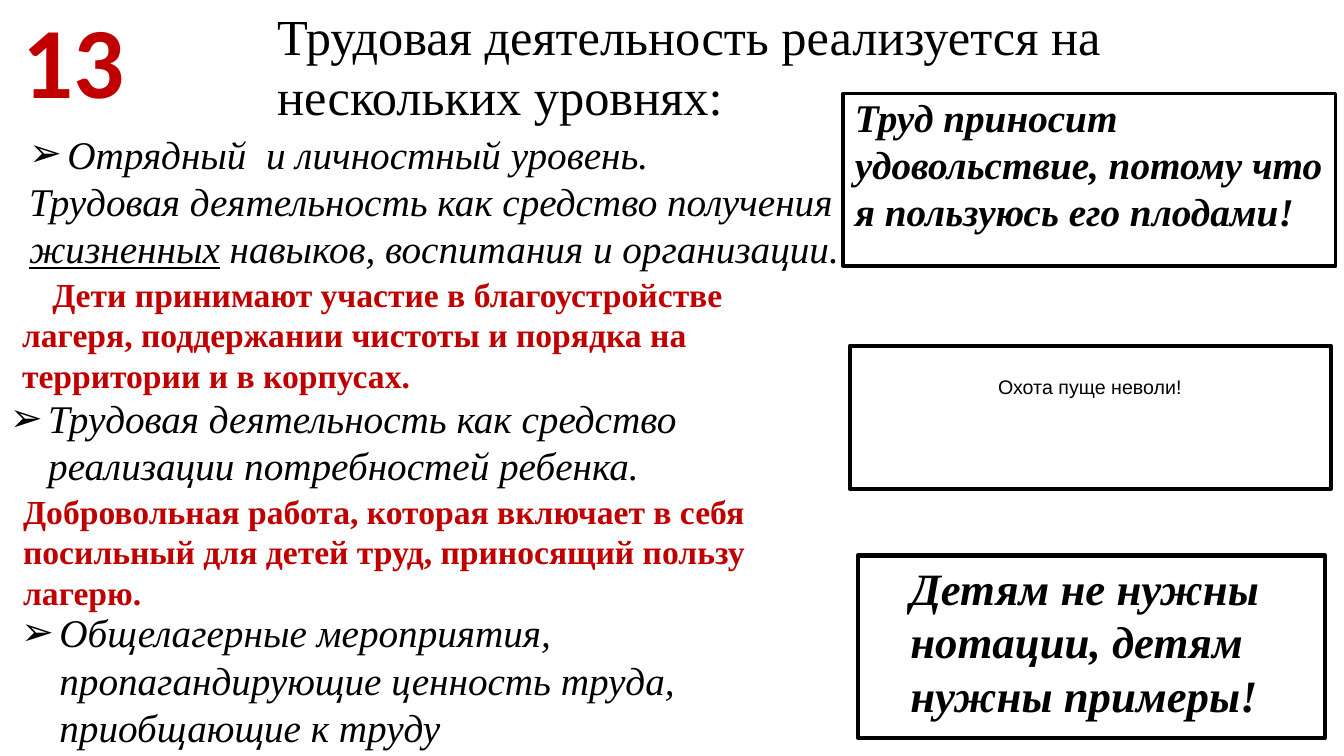
from dataclasses import dataclass

from lxml import etree
from pptx import Presentation
from pptx import util as u
from pptx.dml.color import RGBColor
from pptx.enum import shapes, text
from pptx.oxml.ns import qn


@dataclass(frozen=True)
class TextStyle:
    size: int
    font: str = "Times New Roman"
    color: str = "000000"
    bold: bool = False
    italic: bool = False


class Theme:
    paper = RGBColor.from_string("FFFFFF")
    ink = RGBColor.from_string("000000")
    number = TextStyle(72, "Calibri", "C00000", bold=True)
    title = TextStyle(36)
    level = TextStyle(28, italic=True)
    detail = TextStyle(24, color="C00000", bold=True)
    quote = TextStyle(28, bold=True, italic=True)
    big_quote = TextStyle(32, bold=True, italic=True)
    proverb = TextStyle(14, "Arial")


class SlideBuilder:
    def __init__(self, deck, theme):
        self.deck, self.theme = deck, theme
        self.slide = deck.slides.add_slide(deck.slide_layouts[6])

    def place(self, area):
        """Turn left, top, width, height in percent of the slide into lengths."""
        full = (self.deck.slide_width, self.deck.slide_height) * 2
        return [round(share * length / 100) for share, length in zip(area, full)]

    def frame(self, area, line_width):
        frame = self.slide.shapes.add_shape(
            shapes.MSO_SHAPE.RECTANGLE, *self.place(area))
        frame.shadow.inherit = False
        frame.fill.solid()
        frame.fill.fore_color.rgb = self.theme.paper
        frame.line.color.rgb = self.theme.ink
        frame.line.width = u.Pt(line_width)

    def text(self, area, style, *lines, centred=False, left=0, first=0):
        """Add a text box, one paragraph a line, and return its paragraphs."""
        body = self.slide.shapes.add_textbox(*self.place(area)).text_frame
        body.word_wrap = True
        body.text = "\n".join(lines)
        for paragraph in body.paragraphs:
            if centred:
                paragraph.alignment = text.PP_ALIGN.CENTER
            self.indent(paragraph, left, first)
            for run in paragraph.runs:
                self.format(run, style)
        return body.paragraphs

    def level(self, area, heading):
        """Add a text box with one arrow-bulleted level of work."""
        heading_line = self.text(area, self.theme.level, heading)[0]
        self.bullet(heading_line)
        return heading_line

    def bullet(self, paragraph):
        self.indent(paragraph, 0.38, -0.38)
        props = paragraph._p.get_or_add_pPr()
        etree.SubElement(props, qn("a:buFont"), typeface="Arial")
        etree.SubElement(props, qn("a:buChar"), char="➢")
        tabs = etree.SubElement(props, qn("a:tabLst"))
        etree.SubElement(tabs, qn("a:tab"), pos=str(u.Inches(0.25)), algn="l")

    def indent(self, paragraph, left, first):
        props = paragraph._p.get_or_add_pPr()
        props.set("marL", str(u.Inches(left)))
        props.set("indent", str(u.Inches(first)))

    def format(self, run, style):
        font = run.font
        font.name, font.size = style.font, u.Pt(style.size)
        font.bold, font.italic = style.bold, style.italic
        font.color.rgb = RGBColor.from_string(style.color)


def main():
    deck = Presentation()
    deck.slide_width, deck.slide_height = u.Inches(13.33), u.Inches(7.5)
    theme = Theme()
    page = SlideBuilder(deck, theme)

    squad, purpose = page.text(
        (1.43, 16.53, 62.42, 20.13), theme.level,
        "Отрядный  и личностный уровень.",
        "Трудовая деятельность как средство получения ")
    page.bullet(squad)
    for part, underlined in (("жизненных", True),
                             (" навыков, воспитания и организации.", False)):
        run = purpose.add_run()
        run.text = part
        page.format(run, theme.level)
        run.font.underline = underlined
    page.text((0.9, 35.6, 55.44, 17.47), theme.detail,
              "Дети принимают участие в благоустройстве лагеря, "
              "поддержании чистоты и порядка на территории и в корпусах.",
              first=0.3)

    page.level((0, 51.47, 52.14, 13.87),
               "Трудовая деятельность как средство реализации "
               "потребностей ребенка.")
    page.text((0.98, 64.27, 55.44, 17.47), theme.detail,
              "Добровольная работа, которая включает в себя посильный "
              "для детей труд, приносящий пользу лагерю.")

    page.level((0.83, 79.87, 55.74, 20.13),
               "Общелагерные мероприятия, пропагандирующие ценность труда, "
               "приобщающие к труду")

    page.frame((62.72, 12.4, 36.68, 22.8), 2.25)
    page.text((61.37, 11.73, 37.96, 20.13), theme.quote,
              "Труд приносит удовольствие, потому что я пользуюсь "
              "его плодами!", left=0.2)

    page.frame((63.24, 45.73, 35.78, 18.93), 3)
    page.text((63.84, 48.93, 34.51, 12.27), theme.proverb,
              "Охота пуще неволи!", centred=True)

    page.frame((63.84, 73.47, 34.73, 24.13), 3)
    page.text((66.99, 73.47, 32.03, 22.93), theme.big_quote,
              "Детям не нужны нотации, детям", "нужны примеры!")

    page.text((19.88, 0, 64.37, 17.47), theme.title,
              "Трудовая деятельность реализуется на", "нескольких уровнях:")
    page.text((0.83, -0.93, 9.23, 17.47), theme.number, "13", centred=True)

    deck.save("out.pptx")


if __name__ == "__main__":
    main()
